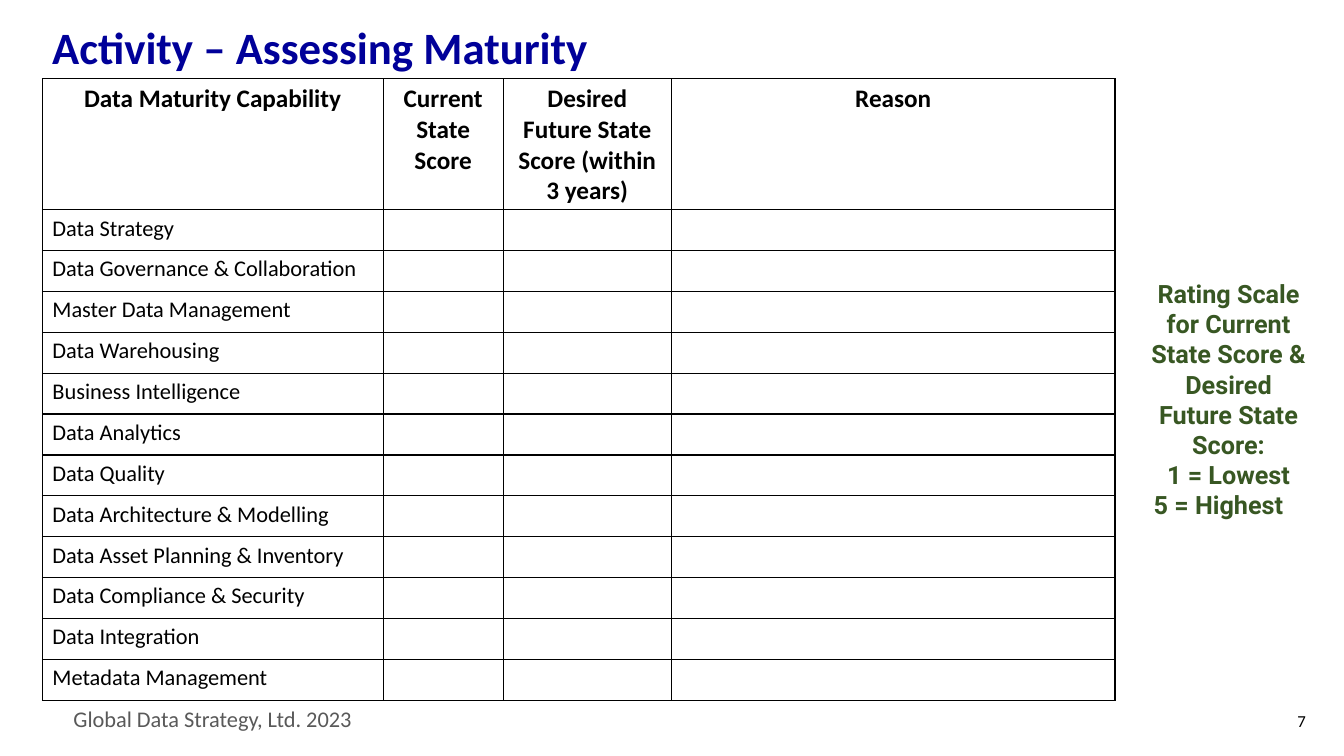
import pptx
import pptx.dml.color
import pptx.enum.text
import pptx.oxml
import pptx.oxml.ns
import pptx.util
from pptx.util import Inches

COLORS = {
    "title": "000099",
    "text": "000000",
    "footer": "595959",
    "scale": "385723",
}
ALIGN = pptx.enum.text.PP_ALIGN
ANCHOR = pptx.enum.text.MSO_ANCHOR

HEADINGS = [
    "Data Maturity Capability",
    "Current State Score",
    "Desired Future State Score (within 3 years)",
    "Reason",
]
CAPABILITIES = [
    "Data Strategy",
    "Data Governance & Collaboration",
    "Master Data Management",
    "Data Warehousing",
    "Business Intelligence",
    "Data Analytics",
    "Data Quality",
    "Data Architecture & Modelling",
    "Data Asset Planning & Inventory",
    "Data Compliance & Security",
    "Data Integration",
    "Metadata Management",
]
RATING_SCALE = [
    "Rating Scale for Current State Score & Desired Future State Score:",
    "1 = Lowest",
    "5 = Highest",
]
COLUMN_WIDTHS = [3.38, 1.19, 1.67, 4.4]
TABLE_HEIGHT = 6.17
HEADER_HEIGHT = 1.3


class SlideBuilder:
    def __init__(self, page, font="Calibri"):
        self.page = page
        self.font = font

    def add_text(self, para, text, size, color="text", bold=False, align=ALIGN.LEFT, font=None):
        para.alignment = align
        span = para.add_run()
        span.text = text
        span.font.name = font or self.font
        span.font.size = pptx.util.Pt(size)
        span.font.bold = bold
        span.font.color.rgb = pptx.dml.color.RGBColor.from_string(COLORS[color])

    def text_box(self, left, top, width, height, lines, size, anchor=ANCHOR.TOP,
                 line_spacing=None, **style):
        box = self.page.shapes.add_textbox(
            Inches(left), Inches(top), Inches(width), Inches(height))
        frame = box.text_frame
        frame.word_wrap = True
        frame.vertical_anchor = anchor
        for index, line in enumerate(lines):
            para = frame.add_paragraph() if index else frame.paragraphs[0]
            if line_spacing:
                para.line_spacing = line_spacing
            self.add_text(para, line, size, **style)
        return box

    def cell_border(self, cell, width=1):
        """Draw a solid line on all four sides of a cell."""
        properties = cell._tc.get_or_add_tcPr()
        for position, side in enumerate(("lnL", "lnR", "lnT", "lnB")):
            line = pptx.oxml.parse_xml(
                f'<a:{side} {pptx.oxml.ns.nsdecls("a")} w="{pptx.util.Pt(width)}">'
                f'<a:solidFill><a:srgbClr val="{COLORS["text"]}"/></a:solidFill>'
                f'</a:{side}>')
            properties.insert(position, line)

    def assessment_table(self, left, top):
        row_count = len(CAPABILITIES) + 1
        table = self.page.shapes.add_table(
            row_count, len(HEADINGS), Inches(left), Inches(top),
            Inches(sum(COLUMN_WIDTHS)), Inches(TABLE_HEIGHT)).table
        table.first_row = False
        table.horz_banding = False
        for column, width in zip(table.columns, COLUMN_WIDTHS):
            column.width = Inches(width)
        for row in table.rows:
            row.height = Inches((TABLE_HEIGHT - HEADER_HEIGHT) / len(CAPABILITIES))
        table.rows[0].height = Inches(HEADER_HEIGHT)
        for cell in table.iter_cells():
            cell.fill.background()
            self.cell_border(cell)
        for index, heading in enumerate(HEADINGS):
            para = table.cell(0, index).text_frame.paragraphs[0]
            self.add_text(para, heading, 18, bold=True, align=ALIGN.CENTER)
        for index, capability in enumerate(CAPABILITIES, start=1):
            para = table.cell(index, 0).text_frame.paragraphs[0]
            self.add_text(para, capability, 16)


def main():
    deck = pptx.Presentation()
    deck.slide_width = Inches(13.33)
    deck.slide_height = Inches(7.5)
    builder = SlideBuilder(deck.slides.add_slide(deck.slide_layouts[6]))

    builder.text_box(0.63, 6.95, 3.62, 0.37, ["Global Data Strategy, Ltd. 2023"], 16,
                     color="footer")
    builder.text_box(0.42, 0.16, 11.5, 0.68, ["Activity – Assessing Maturity"], 32,
                     anchor=ANCHOR.MIDDLE, line_spacing=0.9, color="title", bold=True)
    builder.text_box(12.42, 6.95, 0.63, 0.4, ["7"], 12,
                     anchor=ANCHOR.MIDDLE, align=ALIGN.RIGHT)
    builder.assessment_table(0.42, 0.78)
    scale = builder.text_box(11.32, 2.71, 1.73, 2.52, RATING_SCALE, 18,
                             color="scale", bold=True, align=ALIGN.CENTER, font="Roboto")
    highest = scale.text_frame.paragraphs[-1]
    highest._p.get_or_add_pPr().set("marR", str(Inches(0.2)))

    deck.save("out.pptx")


if __name__ == "__main__":
    main()
